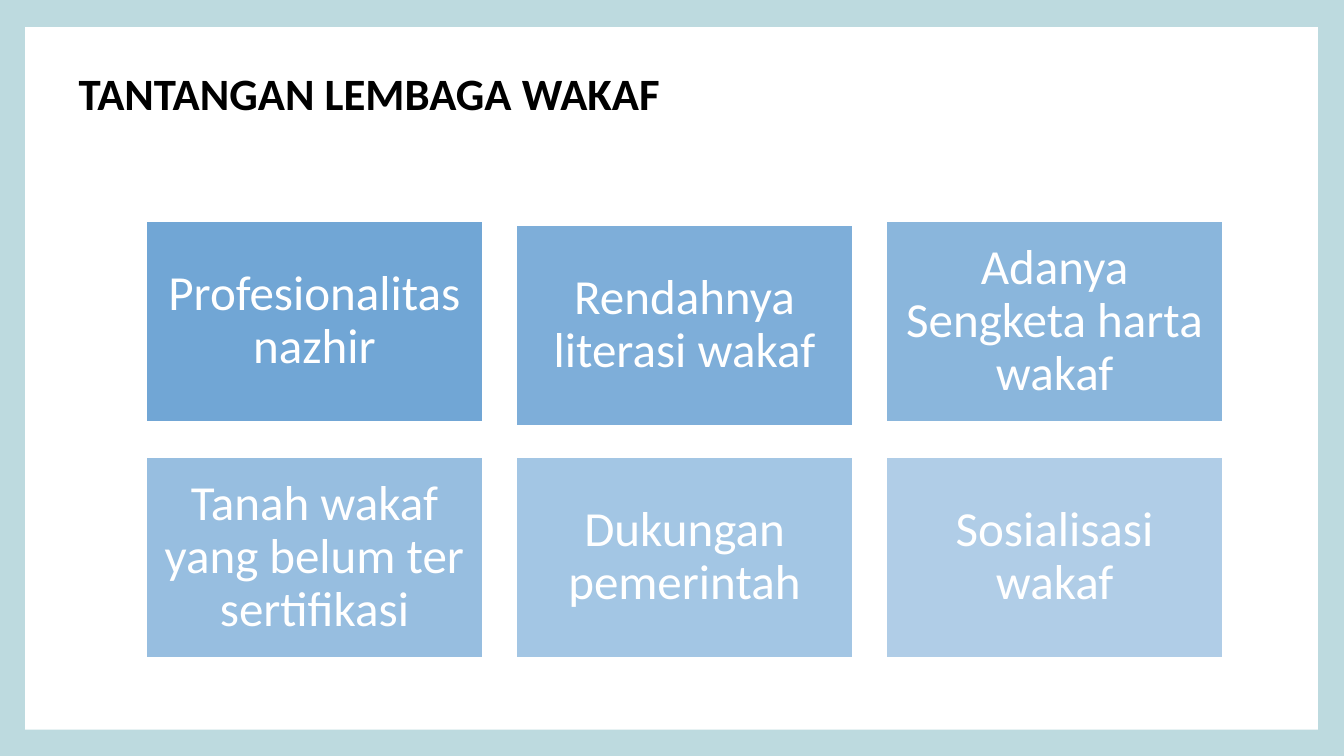
"""Build the slide on the challenges of waqf institutions."""
from lxml import etree
from pptx import Presentation
from pptx.dml.color import RGBColor
from pptx.enum.shapes import MSO_SHAPE
from pptx.enum.text import MSO_ANCHOR, MSO_AUTO_SIZE, PP_ALIGN
from pptx.oxml.ns import qn
from pptx.util import Inches, Pt

RECTANGLE = MSO_SHAPE.RECTANGLE
TOP, MIDDLE = MSO_ANCHOR.TOP, MSO_ANCHOR.MIDDLE
LEFT, CENTER = PP_ALIGN.LEFT, PP_ALIGN.CENTER
NO_AUTOFIT = MSO_AUTO_SIZE.NONE

TITLE = "TANTANGAN LEMBAGA WAKAF"
CHALLENGES = [
    "Profesionalitas nazhir",
    "Rendahnya literasi wakaf",
    "Adanya Sengketa harta wakaf",
    "Tanah wakaf yang belum ter sertifikasi",
    "Dukungan pemerintah",
    "Sosialisasi wakaf",
]
FONT = "Calibri"
BACKGROUND, WHITE, BLACK, BLUE = "BDDADF", "FFFFFF", "000000", "629DD1"

COLUMNS = 3
GRID_LEFT, GRID_TOP = 1.45, 2.19
CARD_WIDTH, CARD_HEIGHT = 3.34, 2
COLUMN_STEP, ROW_STEP = 3.67, 2.34
LOWERED_CARD, LOWERED_BY = 1, 0.04
FIRST_OPACITY, OPACITY_STEP = 90, 8


def color(value):
    return RGBColor.from_string(value)


def set_text(shape, text, *, size, fill, bold=False, align=LEFT,
             anchor=TOP, spacing=1.0, margins=(0.1, 0.05)):
    frame = shape.text_frame
    frame.word_wrap = True
    frame.auto_size = NO_AUTOFIT
    frame.vertical_anchor = anchor
    frame.margin_left = frame.margin_right = Inches(margins[0])
    frame.margin_top = frame.margin_bottom = Inches(margins[1])
    para = frame.paragraphs[0]
    para.alignment = align
    para.line_spacing = spacing
    span = para.add_run()
    span.text = text
    span.font.name = FONT
    span.font.size = Pt(size)
    span.font.bold = bold
    span.font.color.rgb = color(fill)


def add_rectangle(page, left, top, width, height, fill):
    box = page.shapes.add_shape(
        RECTANGLE, Inches(left), Inches(top), Inches(width), Inches(height))
    box.shadow.inherit = False
    box.fill.solid()
    box.fill.fore_color.rgb = color(fill)
    box.line.fill.background()
    return box


def set_opacity(box, percent):
    tint = box.fill._xPr.find(qn("a:solidFill"))[0]
    etree.SubElement(tint, qn("a:alpha"), val=str(percent * 1000))


def add_card(page, index, text):
    row, column = divmod(index, COLUMNS)
    left = GRID_LEFT + column * COLUMN_STEP
    top = GRID_TOP + row * ROW_STEP
    if index == LOWERED_CARD:
        top += LOWERED_BY
    card = add_rectangle(page, left, top, CARD_WIDTH, CARD_HEIGHT, BLUE)
    set_opacity(card, FIRST_OPACITY - index * OPACITY_STEP)
    card.line.color.rgb = color(WHITE)
    card.line.width = Pt(1.5)
    set_text(card, text, size=35, fill=WHITE, align=CENTER, anchor=MIDDLE,
             spacing=0.9, margins=(0.15, 0.15))


def main():
    deck = Presentation()
    deck.slide_width, deck.slide_height = Inches(13.33), Inches(7.5)
    page = deck.slides.add_slide(deck.slide_layouts[5])
    page.background.fill.solid()
    page.background.fill.fore_color.rgb = color(BACKGROUND)

    panel = add_rectangle(page, 0.25, 0.27, 12.82, 6.97, WHITE)
    title = page.shapes.title
    title._element.addprevious(panel._element)
    title.left, title.top = Inches(0.68), Inches(0.6)
    title.width, title.height = Inches(11.77), Inches(0.64)
    set_text(title, TITLE, size=32, fill=BLACK, bold=True)

    for index, text in enumerate(CHALLENGES):
        add_card(page, index, text)
    deck.save("out.pptx")


if __name__ == "__main__":
    main()
